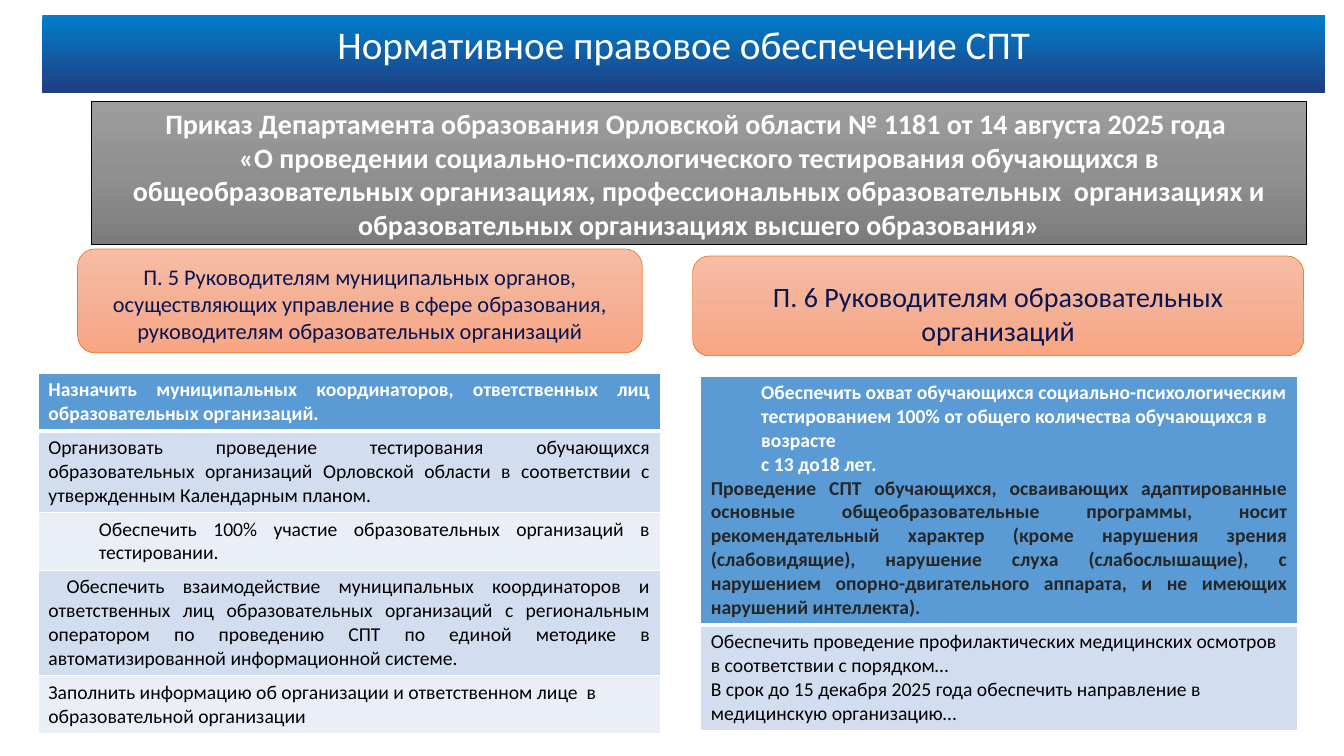
from copy import deepcopy

from pptx import Presentation
from pptx import util as u
from pptx.dml.color import RGBColor
from pptx.enum import shapes, text
from pptx.oxml import parse_xml
from pptx.oxml.ns import nsdecls, qn

GREY = ["9D9D9D", "909090", "7C7C7C"]
PEACH = ["F7BDA5", "F5B196", "F8A582"]
BLUE = ["007ECA", "1F3E83"]
HEADER, BAND_DARK, BAND_LIGHT = "5B9BD5", "D2DEEF", "EAEFF7"
CENTER, JUSTIFY, LEFT = text.PP_ALIGN.CENTER, text.PP_ALIGN.JUSTIFY, text.PP_ALIGN.LEFT


def color(hex_string):
    return RGBColor.from_string(hex_string)


def fill_gradient(sp, colors):
    """Spread the colours evenly from top to bottom."""
    sp.fill.gradient()
    sp.fill.gradient_angle = 270
    stop_list = sp._element.spPr.find(".//" + qn("a:gsLst"))
    while len(stop_list) < len(colors):
        stop_list.append(deepcopy(stop_list[-1]))
    for i, (stop, hex_string) in enumerate(zip(sp.fill.gradient_stops, colors)):
        stop.position = i / (len(colors) - 1)
        stop.color.rgb = color(hex_string)


def add_paragraph(tf, index, words, align, size, hex_string, bold=False, left=0, first=0):
    p = tf.paragraphs[0] if index == 0 else tf.add_paragraph()
    p.text = words
    p.alignment = align
    pPr = p._p.get_or_add_pPr()
    pPr.set("marL", str(u.Inches(left)))
    pPr.set("indent", str(u.Inches(first)))
    for r in p.runs:
        values = {"name": "Calibri", "size": u.Pt(size), "bold": bold}
        for key, value in values.items():
            setattr(r.font, key, value)
        r.font.color.rgb = color(hex_string)


def add_panel(slide, box, kind, colors, line, lines, size, hex_string, bold=False,
              anchor=text.MSO_ANCHOR.TOP, top=0.05):
    sp = slide.shapes.add_shape(kind, *map(u.Inches, box))
    sp.shadow.inherit = False
    fill_gradient(sp, colors)
    if line:
        sp.line.color.rgb = color(line)
        sp.line.width = u.Pt(0.5)
    else:
        sp.line.fill.background()
    tf = sp.text_frame
    settings = {"word_wrap": True, "vertical_anchor": anchor, "margin_top": u.Inches(top)}
    for key, value in settings.items():
        setattr(tf, key, value)
    for i, words in enumerate(lines):
        add_paragraph(tf, i, words, CENTER, size, hex_string, bold)


def add_borders(cell, top, bottom):
    tcPr = cell._tc.get_or_add_tcPr()
    for side, points in (("L", 1), ("R", 1), ("T", top), ("B", bottom)):
        tcPr.append(parse_xml(
            f'<a:ln{side} {nsdecls("a")} w="{u.Pt(points)}"><a:solidFill>'
            f'<a:srgbClr val="FFFFFF"/></a:solidFill></a:ln{side}>'))


def add_task_table(slide, left, top, width, heights, rows):
    """One column of tasks: a header row, then alternating bands."""
    frame = slide.shapes.add_table(len(rows), 1, *map(u.Inches, (left, top, width, sum(heights))))
    table = frame.table
    for i, (height, paragraphs) in enumerate(zip(heights, rows)):
        table.rows[i].height = u.Inches(height)
        cell = table.cell(i, 0)
        add_borders(cell, 3 if i == 1 else 1, 3 if i == 0 else 1)
        cell.fill.solid()
        band = HEADER if i == 0 else (BAND_LIGHT, BAND_DARK)[i % 2]
        cell.fill.fore_color.rgb = color(band)
        for j, (words, style) in enumerate(paragraphs):
            style = {"align": LEFT, "size": 14, "bold": i == 0,
                     "hex_string": "000000" if i else "FFFFFF", **style}
            add_paragraph(cell.text_frame, j, words, **style)


def add_heading(slide):
    rect = shapes.MSO_SHAPE.RECTANGLE
    add_panel(slide, (0.42, 0.15, 12.72, 0.77), rect, BLUE, None,
              ["Нормативное правовое обеспечение СПТ"], 28, "FFFFFF")
    add_panel(slide, (0.91, 1.01, 12.05, 1.41), rect, GREY, "000000", [
        "Приказ Департамента образования Орловской области № 1181 от 14 августа 2025 года ",
        "«О проведении социально-психологического тестирования обучающихся в "
        "общеобразовательных организациях, профессиональных образовательных  "
        "организациях и образовательных организациях высшего образования»",
    ], 20, "FFFFFF", bold=True)


def add_addressee(slide, box, words, size, top):
    add_panel(slide, box, shapes.MSO_SHAPE.ROUNDED_RECTANGLE, PEACH, "ED7D31", [words],
              size, "081554", anchor=text.MSO_ANCHOR.MIDDLE, top=top)


def build_slide(prs):
    slide = prs.slides.add_slide(prs.slide_layouts[6])
    add_heading(slide)

    # Addressees of the two clauses
    add_addressee(slide, (0.77, 2.47, 5.6, 1.03),
                  "П. 5 Руководителям муниципальных органов, осуществляющих управление "
                  "в сфере образования, руководителям образовательных организаций", 16, 0.11)
    add_addressee(slide, (6.87, 2.54, 6.06, 0.99),
                  "П. 6 Руководителям образовательных организаций", 20, 0.19)

    # Tasks of municipal bodies
    justified = {"align": JUSTIFY}
    add_task_table(slide, 0.38, 3.7, 6.17, [0.57, 0.81, 0.57, 1.04, 0.57], [
        [("Назначить муниципальных координаторов, ответственных лиц "
          "образовательных организаций.", justified)],
        [("Организовать проведение тестирования обучающихся образовательных организаций "
          "Орловской области в соответствии с утвержденным Календарным планом.", justified)],
        [("Обеспечить 100% участие образовательных организаций в тестировании.",
          {"align": JUSTIFY, "left": 0.5})],
        [("Обеспечить взаимодействие муниципальных координаторов и ответственных лиц "
          "образовательных организаций с региональным оператором по проведению СПТ по "
          "единой методике в автоматизированной информационной системе.",
          {"align": JUSTIFY, "first": 0.18})],
        [("Заполнить информацию об организации и ответственном лице  в "
          "образовательной организации", {})],
    ])

    # Tasks of schools and colleges
    add_task_table(slide, 6.95, 3.73, 5.92, [2.47, 1.04], [
        [("Обеспечить охват обучающихся социально-психологическим тестированием 100% "
          "от общего количества обучающихся в возрасте \vс 13 до18 лет.", {"left": 0.5}),
         ("Проведение СПТ обучающихся, осваивающих адаптированные основные "
          "общеобразовательные программы, носит рекомендательный характер (кроме нарушения "
          "зрения (слабовидящие), нарушение слуха (слабослышащие), с нарушением "
          "опорно-двигательного аппарата, и не имеющих нарушений интеллекта).",
          {"align": JUSTIFY, "hex_string": "262626"})],
        [("Обеспечить проведение профилактических медицинских осмотров "
          "в соответствии с порядком…", {}),
         ("В срок до 15 декабря 2025 года обеспечить направление "
          "в медицинскую организацию…", {})],
    ])


def main():
    prs = Presentation()
    prs.slide_width, prs.slide_height = u.Inches(13.33), u.Inches(7.5)
    build_slide(prs)
    prs.save("out.pptx")


if __name__ == "__main__":
    main()
